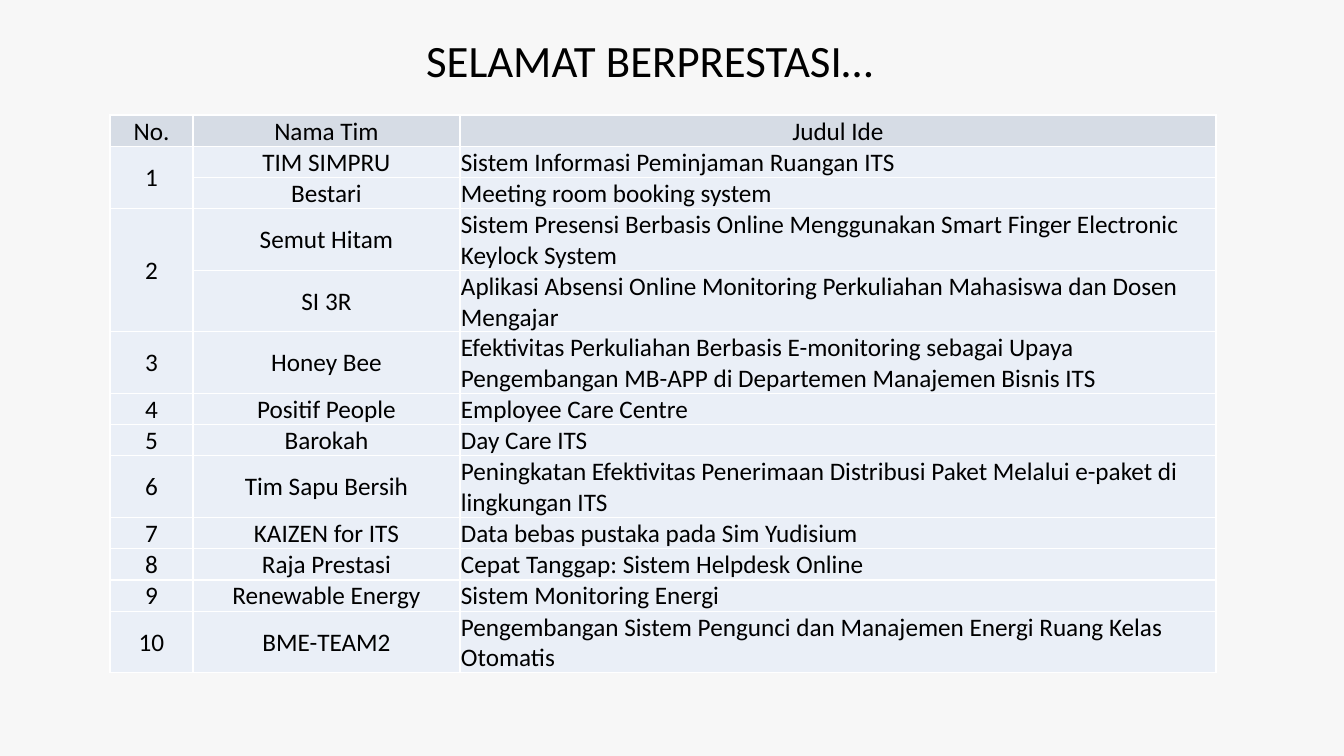
from dataclasses import dataclass
from itertools import groupby
from typing import Any, NamedTuple

from lxml.etree import SubElement
from pptx import Presentation
from pptx.dml.color import RGBColor
from pptx.enum.text import MSO_ANCHOR, MSO_AUTO_SIZE, PP_ALIGN
from pptx.oxml.ns import qn
from pptx.util import Emu, Pt


@dataclass(frozen=True)
class Theme:
    background: str = "F7F7F7"
    header: str = "D6DCE5"
    body: str = "EAEFF7"
    border: str = "FFFFFF"
    text: str = "000000"
    font: str = "Calibri"
    title_size: int = 32
    table_size: int = 18
    border_width: int = 1


class Entry(NamedTuple):
    rank: int
    team: str
    idea: str


class Box(NamedTuple):
    left: int
    top: int
    width: int
    height: int


THEME = Theme()
PAGE_WIDTH, PAGE_HEIGHT = 1344, 756
EMU_PER_PX = 12192000 / PAGE_WIDTH

TITLE = "SELAMAT BERPRESTASI…"
TITLE_BOX = Box(416, 28, 472, 65)
TABLE_BOX = Box(110, 115, 1106, 558)
COLUMN_WIDTHS = (83, 267, 756)
ROW_HEIGHT = 23  # minimum; rows grow with their text
HEADINGS = ("No.", "Nama Tim", "Judul Ide")
ENTRIES = (
    Entry(1, "TIM SIMPRU", "Sistem Informasi Peminjaman Ruangan ITS"),
    Entry(1, "Bestari", "Meeting room booking system"),
    Entry(2, "Semut Hitam", "Sistem Presensi Berbasis Online Menggunakan Smart Finger "
          "Electronic Keylock System"),
    Entry(2, "SI 3R", "Aplikasi Absensi Online Monitoring Perkuliahan Mahasiswa dan "
          "Dosen Mengajar"),
    Entry(3, "Honey Bee", "Efektivitas Perkuliahan Berbasis E-monitoring sebagai Upaya "
          "Pengembangan MB-APP di Departemen Manajemen Bisnis ITS"),
    Entry(4, "Positif People", "Employee Care Centre"),
    Entry(5, "Barokah", "Day Care ITS"),
    Entry(6, "Tim Sapu Bersih", "Peningkatan Efektivitas Penerimaan Distribusi Paket "
          "Melalui e-paket di lingkungan ITS"),
    Entry(7, "KAIZEN for ITS", "Data bebas pustaka pada Sim Yudisium"),
    Entry(8, "Raja Prestasi", "Cepat Tanggap: Sistem Helpdesk Online"),
    Entry(9, "Renewable Energy", "Sistem Monitoring Energi"),
    Entry(10, "BME-TEAM2", "Pengembangan Sistem Pengunci dan Manajemen Energi Ruang "
          "Kelas Otomatis"),
)


def px(length: int) -> Emu:
    return Emu(round(length * EMU_PER_PX))


def apply(target: Any, values: dict[str, Any]) -> None:
    for name, value in values.items():
        setattr(target, name, value)


def write(frame: Any, text: str, size: int, alignment: PP_ALIGN) -> None:
    para = frame.paragraphs[0]
    para.alignment = alignment
    span = para.add_run()
    span.text = text
    apply(span.font, {"name": THEME.font, "size": Pt(size), "bold": False})
    span.font.color.rgb = RGBColor.from_string(THEME.text)


def add_borders(cell: Any) -> None:
    properties = cell._tc.get_or_add_tcPr()
    for position, side in enumerate(("lnL", "lnR", "lnT", "lnB")):
        line = SubElement(properties, qn(f"a:{side}"), w=str(Pt(THEME.border_width)))
        fill = SubElement(line, qn("a:solidFill"))
        SubElement(fill, qn("a:srgbClr"), val=THEME.border)
        properties.insert(position, line)


def draw_title(page: Any) -> None:
    title = page.shapes.title
    apply(title, {name: px(value) for name, value in TITLE_BOX._asdict().items()})
    apply(title.text_frame, {
        "word_wrap": False,
        "auto_size": MSO_AUTO_SIZE.SHAPE_TO_FIT_TEXT,
        "vertical_anchor": MSO_ANCHOR.TOP,
    })
    write(title.text_frame, TITLE, THEME.title_size, PP_ALIGN.LEFT)


def draw_table(page: Any) -> None:
    frame = page.shapes.add_table(len(ENTRIES) + 1, len(HEADINGS), *map(px, TABLE_BOX))
    table = frame.table
    table.horz_banding = False
    for column, width in zip(table.columns, COLUMN_WIDTHS):
        column.width = px(width)
    for row in table.rows:
        row.height = px(ROW_HEIGHT)
    frame.height = px(TABLE_BOX.height)

    # Teams sharing a rank share one number cell
    first = 1
    for _, group in groupby(ENTRIES, key=lambda entry: entry.rank):
        count = len(list(group))
        if count > 1:
            table.cell(first, 0).merge(table.cell(first + count - 1, 0))
        first += count

    # Cell text, fills and borders
    for row_index, values in enumerate((HEADINGS, *ENTRIES)):
        for column_index, value in enumerate(values):
            cell = table.cell(row_index, column_index)
            apply(cell, {
                "margin_left": px(1), "margin_right": px(1),
                "margin_top": px(1), "margin_bottom": px(0),
                "vertical_anchor": MSO_ANCHOR.MIDDLE,
            })
            cell.fill.solid()
            color = THEME.body if row_index else THEME.header
            cell.fill.fore_color.rgb = RGBColor.from_string(color)
            add_borders(cell)
            if not cell.is_spanned:
                is_idea = row_index > 0 and column_index == 2
                alignment = PP_ALIGN.LEFT if is_idea else PP_ALIGN.CENTER
                write(cell.text_frame, str(value), THEME.table_size, alignment)


def main() -> None:
    deck = Presentation()
    apply(deck, {"slide_width": px(PAGE_WIDTH), "slide_height": px(PAGE_HEIGHT)})
    page = deck.slides.add_slide(deck.slide_layouts.get_by_name("Title Only"))
    page.background.fill.solid()
    page.background.fill.fore_color.rgb = RGBColor.from_string(THEME.background)
    draw_title(page)
    draw_table(page)
    deck.save("out.pptx")


if __name__ == "__main__":
    main()
